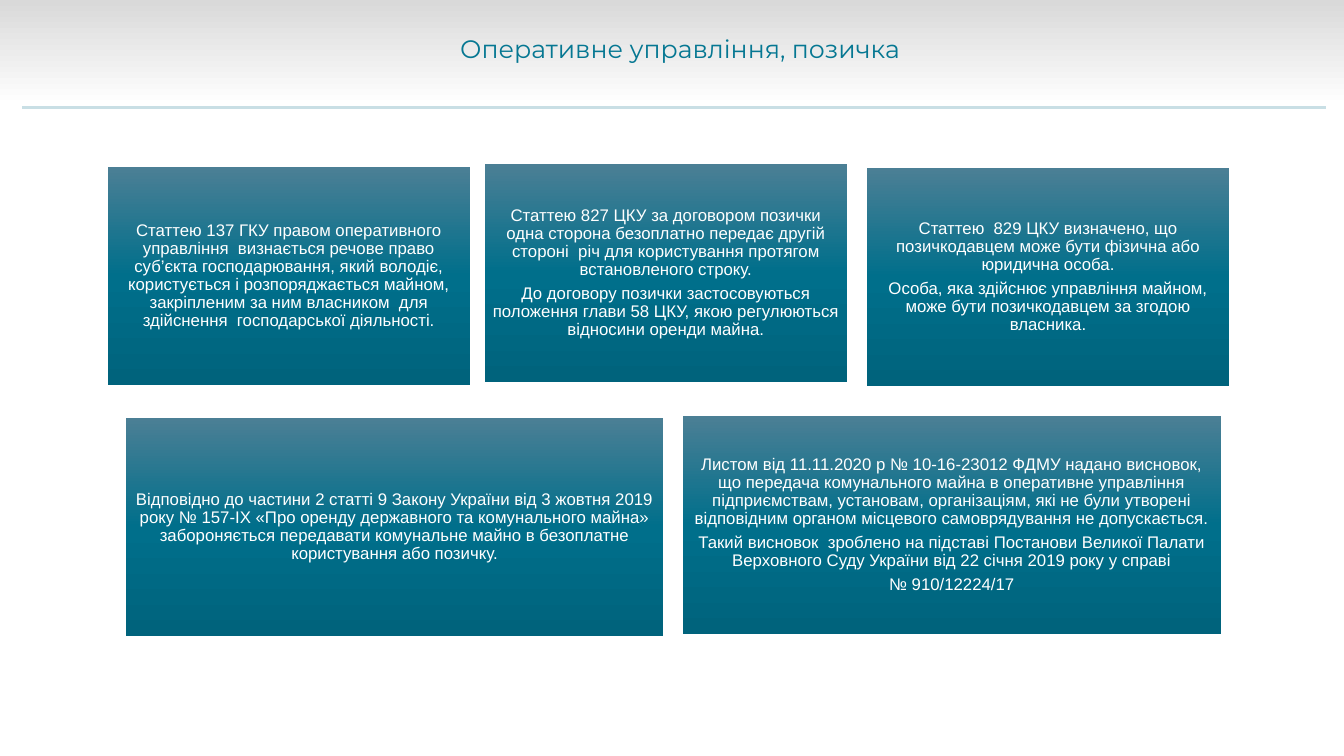
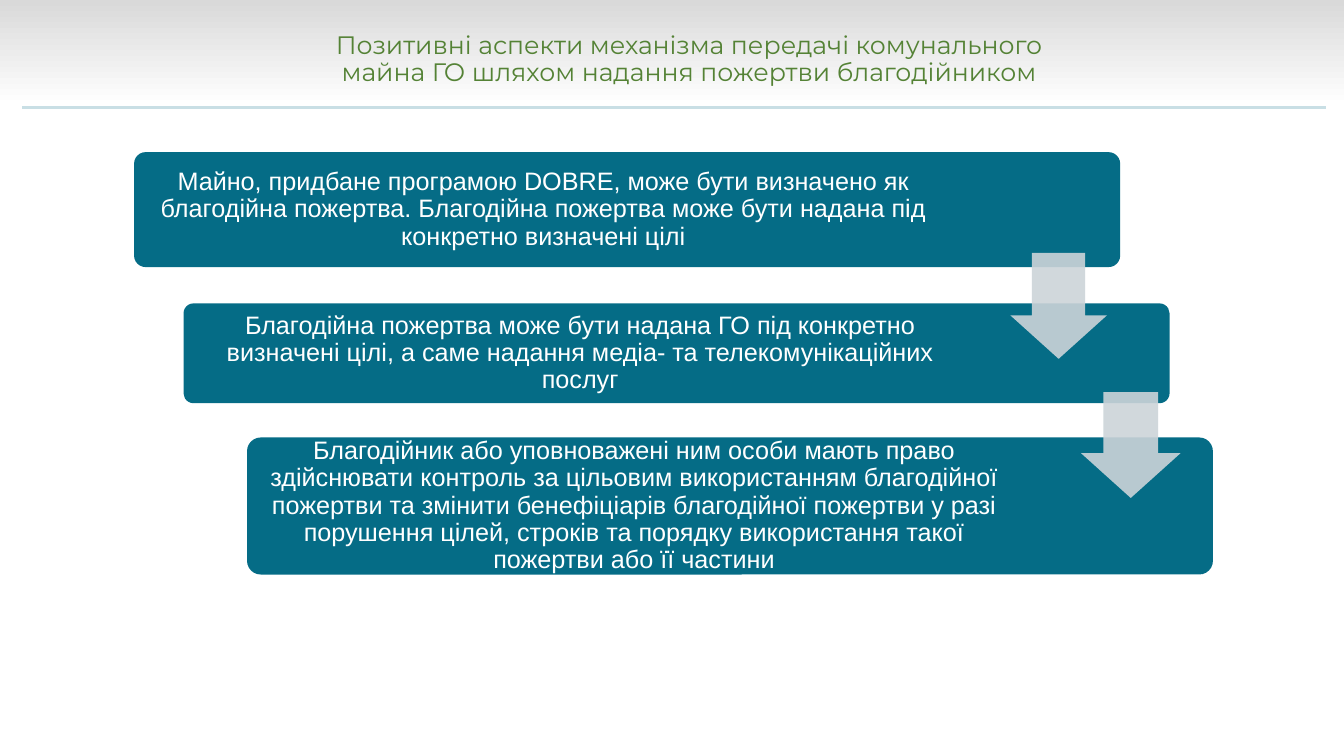
from copy import deepcopy

from pptx import Presentation
from pptx.dml.color import RGBColor
from pptx.enum.shapes import MSO_CONNECTOR, MSO_SHAPE
from pptx.enum.text import MSO_ANCHOR, PP_ALIGN
from pptx.oxml.ns import qn
from pptx.util import Inches, Pt
from lxml.etree import SubElement

WHITE = RGBColor(0xFF, 0xFF, 0xFF)
BAND_GRAY = RGBColor(0xD9, 0xD9, 0xD9)
RULE_BLUE = RGBColor(0xC9, 0xDF, 0xE5)
TEAL = RGBColor(0x05, 0x77, 0x92)
GREEN = RGBColor(0x54, 0x82, 0x35)
STEP_TEAL = RGBColor(0x05, 0x6C, 0x86)
ARROW_GRAY = RGBColor(0xCC, 0xD4, 0xD9)
BAND_STOPS = (BAND_GRAY, WHITE)
CARD_STOPS = (
    RGBColor(0x4B, 0x7F, 0x95),
    RGBColor(0x00, 0x6F, 0x8B),
    RGBColor(0x00, 0x63, 0x7C),
)
TITLE_FONT = "Montserrat"
BODY_FONT = "Arial"

CARDS = [
    ((1.07, 1.66, 3.59, 2.16), [
        "Статтею 137 ГКУ правом оперативного управління  визнається речове право "
        "суб’єкта господарювання, який володіє, користується і розпоряджається майном, "
        "закріпленим за ним власником  для здійснення  господарської діяльності."]),
    ((4.81, 1.63, 3.59, 2.16), [
        "Статтею 827 ЦКУ за договором позички одна сторона безоплатно передає другій "
        "стороні  річ для користування протягом встановленого строку.",
        "До договору позички застосовуються положення глави 58 ЦКУ, якою регулюються "
        "відносини оренди майна."]),
    ((8.6, 1.67, 3.59, 2.16), [
        "Статтею  829 ЦКУ визначено, що позичкодавцем може бути фізична або юридична особа.",
        "Особа, яка здійснює управління майном, може бути позичкодавцем за згодою власника."]),
    ((1.25, 4.15, 5.33, 2.16), [
        "Відповідно до частини 2 статті 9 Закону України від 3 жовтня 2019 року № 157-IX "
        "«Про оренду державного та комунального майна» забороняється передавати комунальне "
        "майно в безоплатне користування або позичку."]),
    ((6.77, 4.13, 5.34, 2.16), [
        "Листом від 11.11.2020 р № 10-16-23012 ФДМУ надано висновок, що передача "
        "комунального майна в оперативне управління підприємствам, установам, "
        "організаціям, які не були утворені відповідним органом місцевого "
        "самоврядування не допускається.",
        "Такий висновок  зроблено на підставі Постанови Великої Палати Верховного Суду "
        "України від 22 січня 2019 року у справі",
        "№ 910/12224/17"]),
]

STEPS = [
    ((1.33, 1.51, 9.78, 1.14), 8.06,
     "Майно, придбане програмою DOBRE, може бути визначено як благодійна пожертва. "
     "Благодійна пожертва може бути надана під конкретно визначені цілі"),
    ((1.82, 3.01, 9.78, 0.99), 7.81,
     "Благодійна пожертва може бути надана ГО під конкретно визначені цілі, а саме "
     "надання медіа- та телекомунікаційних послуг"),
    ((2.45, 4.34, 9.58, 1.36), 7.62,
     "Благодійник або уповноважені ним особи мають право здійснювати контроль за "
     "цільовим використанням благодійної пожертви та змінити бенефіціарів благодійної "
     "пожертви у разі порушення цілей, строків та порядку використання такої пожертви "
     "або її частини"),
]

ARROWS = [(10.02, 2.51, 0.96, 1.05), (10.72, 3.89, 0.99, 1.05)]


def add_block(slide, preset, box, color=None):
    """Add a borderless, shadowless shape, filled when a colour is given."""
    shape = slide.shapes.add_shape(preset, *map(Inches, box))
    shape.shadow.inherit = False
    shape.line.fill.background()
    if color is not None:
        shape.fill.solid()
        shape.fill.fore_color.rgb = color
    return shape


def fill_gradient(shape, colors):
    """Fill a shape from top to bottom with evenly spaced colour stops."""
    shape.fill.gradient()
    shape.fill.gradient_angle = 270
    stop_list = shape.fill._xPr.find(qn("a:gradFill")).find(qn("a:gsLst"))
    for _ in colors[2:]:
        stop_list.append(deepcopy(stop_list[0]))
    for index, (stop, color) in enumerate(zip(shape.fill.gradient_stops, colors)):
        stop.position = index / (len(colors) - 1)
        stop.color.rgb = color


def write_text(shape, paragraphs, font_name, size, color, insets, gap=0):
    """Write centred paragraphs; insets run left, top, right, bottom."""
    frame = shape.text_frame
    frame.word_wrap = True
    frame.vertical_anchor = MSO_ANCHOR.MIDDLE
    frame.margin_left, frame.margin_top, frame.margin_right, frame.margin_bottom = map(
        Inches, insets)
    frame.text = "\n".join(paragraphs)
    for paragraph in frame.paragraphs:
        paragraph.alignment = PP_ALIGN.CENTER
        paragraph.line_spacing = 0.9
        paragraph.space_after = Pt(gap)
        for run in paragraph.runs:
            run.font.name = font_name
            run.font.size = Pt(size)
            run.font.color.rgb = color


def add_titled_slide(presentation, title, box, color):
    """Add a blank slide with the header band, its rule and a title."""
    slide = presentation.slides.add_slide(presentation.slide_layouts[6])
    band = add_block(slide, MSO_SHAPE.RECTANGLE, (0, 0, 13.33, 1.05))
    fill_gradient(band, BAND_STOPS)
    rule = slide.shapes.add_connector(
        MSO_CONNECTOR.STRAIGHT, Inches(0.22), Inches(1.07), Inches(13.15), Inches(1.07))
    rule.line.color.rgb = RULE_BLUE
    rule.line.width = Pt(2)
    SubElement(rule._element.spPr, qn("a:effectLst"))
    title_box = slide.shapes.add_textbox(*map(Inches, box))
    write_text(title_box, [title], TITLE_FONT, 18, color, (0.1, 0.05, 0.1, 0.05))
    return slide


def add_card(slide, box, paragraphs):
    """Add a gradient card with its legal text."""
    card = add_block(slide, MSO_SHAPE.RECTANGLE, box)
    fill_gradient(card, CARD_STOPS)
    write_text(card, paragraphs, BODY_FONT, 12, WHITE, (0.05,) * 4, 4.2)


def add_step(slide, box, text_width, text):
    """Add a rounded step whose text keeps clear of the arrows on the right."""
    step = add_block(slide, MSO_SHAPE.ROUNDED_RECTANGLE, box, STEP_TEAL)
    step.adjustments[0] = 0.1
    insets = (0.1, 0, box[2] - text_width + 0.04, 0)
    write_text(step, [text], BODY_FONT, 18, WHITE, insets)


def add_step_arrow(slide, box):
    """Add a slightly transparent arrow leading to the next step."""
    arrow = add_block(slide, MSO_SHAPE.DOWN_ARROW, box, ARROW_GRAY)
    arrow.adjustments[0] = 0.55
    arrow.adjustments[1] = 0.45
    color = arrow._element.spPr.find(qn("a:solidFill"))[0]
    SubElement(color, qn("a:alpha"), val="90000")


def build_cards_slide(presentation):
    """Build the slide of legal provisions."""
    slide = add_titled_slide(
        presentation, "Оперативне управління, позичка", (2.87, 0.19, 7.75, 0.62), TEAL)
    for box, paragraphs in CARDS:
        add_card(slide, box, paragraphs)


def build_steps_slide(presentation):
    """Build the slide of descending steps."""
    slide = add_titled_slide(
        presentation,
        "Позитивні аспекти механізма передачі комунального майна ГО шляхом надання "
        "пожертви благодійником",
        (2.87, 0.19, 7.93, 0.81), GREEN)
    for box, text_width, text in STEPS:
        add_step(slide, box, text_width, text)
    for box in ARROWS:
        add_step_arrow(slide, box)


def main():
    """Build and save the presentation."""
    presentation = Presentation()
    presentation.slide_width = Inches(13.33)
    presentation.slide_height = Inches(7.5)
    build_cards_slide(presentation)
    build_steps_slide(presentation)
    presentation.save("out.pptx")


if __name__ == "__main__":
    main()
